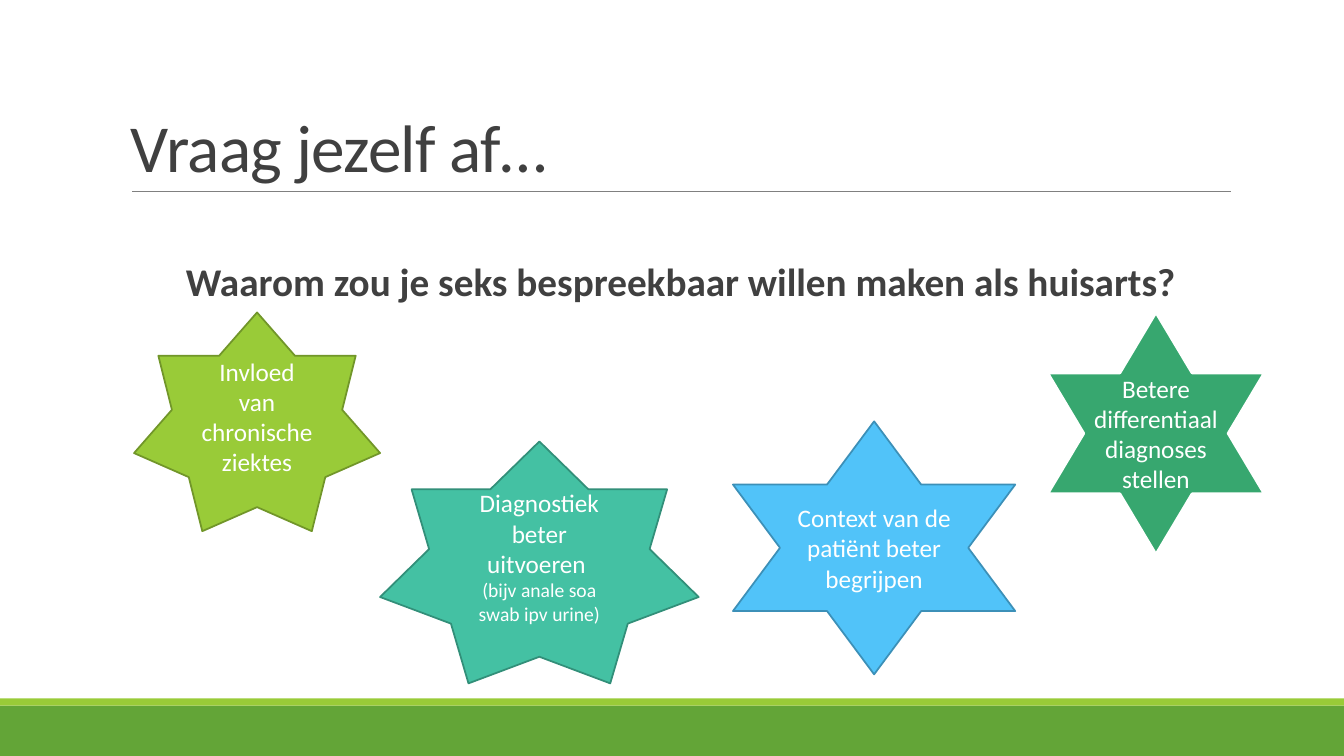
from dataclasses import dataclass

import pptx
import pptx.dml.color
import pptx.enum.shapes
import pptx.enum.text
import pptx.oxml.ns
import pptx.presentation
import pptx.shapes.autoshape
import pptx.slide
import pptx.text.text
import pptx.util
from lxml import etree
from pptx.util import Inches

COLORS = {
    "band": "63A537",
    "lime": "99CB38",
    "lime_edge": "719629",
    "blue": "51C3F9",
    "blue_edge": "3C90B8",
    "teal": "44C1A3",
    "teal_edge": "328F79",
    "green": "37A76F",
    "white": "FFFFFF",
    "text": "404040",
    "rule": "808080",
}
FONT = "Calibri"
STAR6 = pptx.enum.shapes.MSO_SHAPE.STAR_6_POINT
STAR7 = pptx.enum.shapes.MSO_SHAPE.STAR_7_POINT
RECTANGLE = pptx.enum.shapes.MSO_SHAPE.RECTANGLE
CENTER = pptx.enum.text.PP_ALIGN.CENTER
LEFT = pptx.enum.text.PP_ALIGN.LEFT
MIDDLE = pptx.enum.text.MSO_ANCHOR.MIDDLE
BOTTOM = pptx.enum.text.MSO_ANCHOR.BOTTOM


@dataclass(frozen=True)
class Box:
    left: float
    top: float
    width: float
    height: float

    def lengths(self) -> tuple[int, ...]:
        return tuple(Inches(value) for value in (self.left, self.top, self.width, self.height))


@dataclass(frozen=True)
class Line:
    text: str
    size: float
    color: str = "white"
    bold: bool = False


@dataclass(frozen=True)
class Star:
    box: Box
    kind: pptx.enum.shapes.MSO_SHAPE
    fill: str
    edge: str
    edge_width: float
    lines: tuple[Line, ...]


@dataclass(frozen=True)
class Heading:
    box: Box
    line: Line
    anchor: pptx.enum.text.MSO_ANCHOR
    alignment: pptx.enum.text.PP_ALIGN
    line_spacing: float
    side_margin: float
    letter_spacing: int = 0


BANDS = (
    (Box(0, 7, 13.33, 0.5), "band"),
    (Box(0, 6.93, 13.33, 0.07), "lime"),
)
HEADINGS = (
    Heading(Box(1.2, 0.31, 11, 1.59), Line("Vraag jezelf af…", 48, "text"),
            BOTTOM, LEFT, 0.85, 0.1, -50),
    Heading(Box(1.3, 2.52, 10.9, 0.6),
            Line("Waarom zou je seks bespreekbaar willen maken als huisarts?", 28, "text", True),
            MIDDLE, CENTER, 0.9, 0),
)
STARS = (
    Star(Box(1.33, 3.1, 2.44, 2.17), STAR7, "lime", "lime_edge", 1.25,
         (Line("Invloed van chronische ziektes", 18),)),
    Star(Box(7.27, 4.18, 2.8, 2.51), STAR6, "blue", "blue_edge", 1.25,
         (Line("Context van de patiënt beter begrijpen", 18),)),
    Star(Box(3.77, 4.38, 3.16, 2.4), STAR7, "teal", "teal_edge", 1.25,
         (Line("Diagnostiek beter uitvoeren ", 18), Line("(bijv anale soa swab ipv urine)", 14))),
    Star(Box(10.39, 3.1, 2.15, 2.4), STAR6, "green", "white", 2,
         (Line("Betere differentiaal diagnoses stellen", 18),)),
)


def color(name: str) -> pptx.dml.color.RGBColor:
    return pptx.dml.color.RGBColor.from_string(COLORS[name])


def write_line(paragraph: pptx.text.text._Paragraph, line: Line,
               alignment: pptx.enum.text.PP_ALIGN) -> pptx.text.text._Run:
    run = paragraph.add_run()
    run.text = line.text
    paragraph.alignment = alignment
    paragraph.font.name = FONT
    paragraph.font.size = pptx.util.Pt(line.size)
    paragraph.font.bold = line.bold
    paragraph.font.color.rgb = color(line.color)
    return run


def add_filled_shape(slide: pptx.slide.Slide, kind: pptx.enum.shapes.MSO_SHAPE,
                     box: Box, fill: str) -> pptx.shapes.autoshape.Shape:
    shape = slide.shapes.add_shape(kind, *box.lengths())
    shape.shadow.inherit = False
    shape.fill.solid()
    shape.fill.fore_color.rgb = color(fill)
    shape.line.fill.background()
    return shape


def add_rule(slide: pptx.slide.Slide) -> None:
    rule = slide.shapes.add_connector(
        pptx.enum.shapes.MSO_CONNECTOR.STRAIGHT,
        Inches(1.31), Inches(1.9), Inches(12.21), Inches(1.9))
    rule.line.color.rgb = color("rule")
    rule.line.width = pptx.util.Pt(0.5)
    etree.SubElement(rule._element.spPr, pptx.oxml.ns.qn("a:effectLst"))


def add_heading(slide: pptx.slide.Slide, heading: Heading) -> None:
    frame = slide.shapes.add_textbox(*heading.box.lengths()).text_frame
    frame.word_wrap = True
    frame.vertical_anchor = heading.anchor
    frame.margin_left = frame.margin_right = Inches(heading.side_margin)
    paragraph = frame.paragraphs[0]
    run = write_line(paragraph, heading.line, heading.alignment)
    paragraph.line_spacing = heading.line_spacing
    if heading.letter_spacing:
        run._r.get_or_add_rPr().set("spc", str(heading.letter_spacing))


def add_star(slide: pptx.slide.Slide, star: Star) -> None:
    shape = add_filled_shape(slide, star.kind, star.box, star.fill)
    shape.line.color.rgb = color(star.edge)
    shape.line.width = pptx.util.Pt(star.edge_width)
    frame = shape.text_frame
    frame.word_wrap = True
    frame.vertical_anchor = MIDDLE
    for index, line in enumerate(star.lines):
        paragraph = frame.add_paragraph() if index else frame.paragraphs[0]
        write_line(paragraph, line, CENTER)


def main() -> None:
    presentation = pptx.Presentation()
    presentation.slide_width = Inches(13.33)
    presentation.slide_height = Inches(7.5)
    slide = presentation.slides.add_slide(presentation.slide_layouts[6])
    for box, fill in BANDS:
        add_filled_shape(slide, RECTANGLE, box, fill)
    add_rule(slide)
    for heading in HEADINGS:
        add_heading(slide, heading)
    for star in STARS:
        add_star(slide, star)
    presentation.save("out.pptx")


if __name__ == "__main__":
    main()
